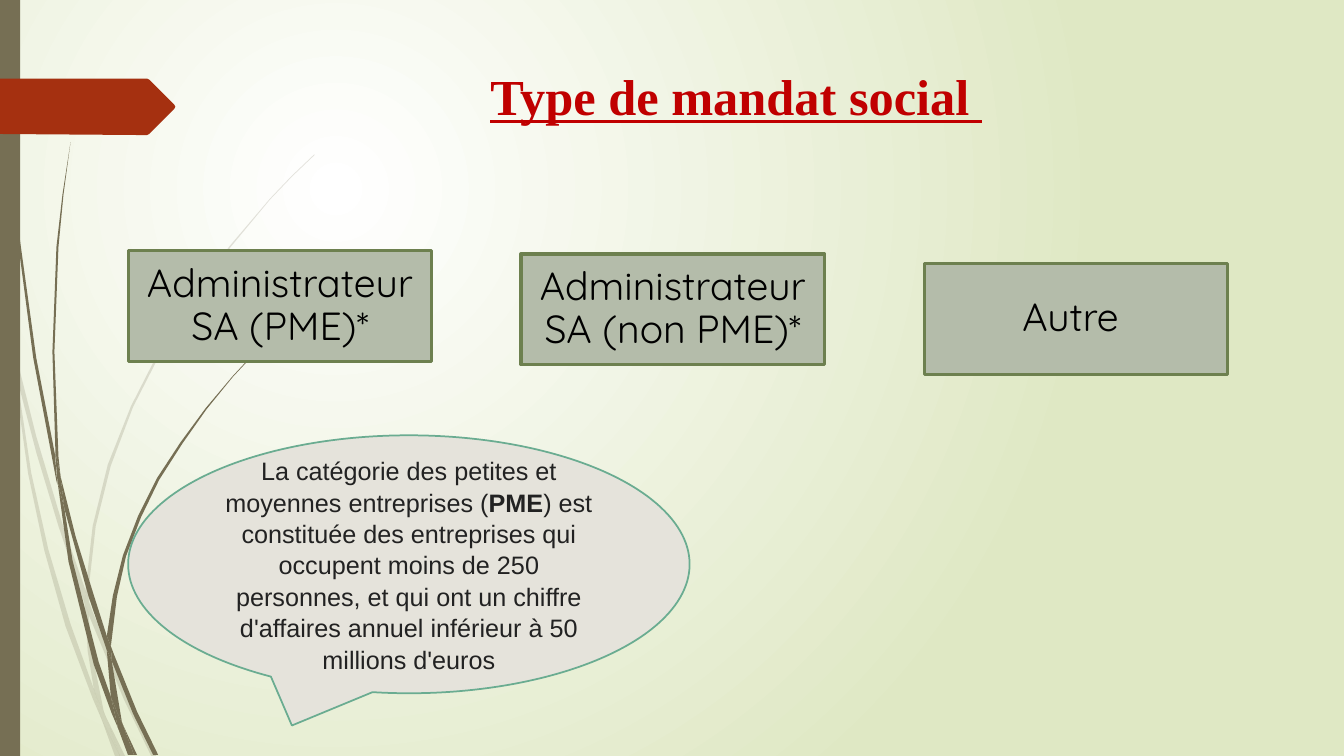
import pptx
import pptx.util
import pptx.dml.color
import pptx.enum.shapes
import pptx.enum.text
import pptx.oxml.ns
from dataclasses import dataclass
from lxml import etree

Cm, Pt = pptx.util.Cm, pptx.util.Pt
RGB = pptx.dml.color.RGBColor.from_string
SHAPE = pptx.enum.shapes.MSO_SHAPE
ALIGN = pptx.enum.text.PP_ALIGN
ANCHOR = pptx.enum.text.MSO_ANCHOR
qn = pptx.oxml.ns.qn


@dataclass(frozen=True)
class Theme:
    glow: str = "FFFFFF"
    backdrop: str = "DFE8C4"
    stem: str = "766F54"
    banner: str = "A53010"
    title: str = "C00000"
    box_fill: str = "B4BCAA"
    box_line: str = "6D804F"
    box_text: str = "000000"
    bubble_fill: str = "E5E3DB"
    bubble_line: str = "6AAC91"
    bubble_text: str = "222222"
    title_size: int = 36
    box_size: int = 28
    bubble_size: int = 18


# Outlines are lists of x, y points in hundredths of an inch.
PALE_STEMS = [
    [(11, 350), (9, 322), (0, 282), (0, 299), (10, 344)],
    [(58, 522), (84, 599), (85, 586), (62, 520), (36, 433), (14, 345), (17, 376), (36, 449)],
    [(92, 607), (88, 596), (88, 610), (123, 694), (150, 750), (155, 750), (127, 692)],
    [(119, 750), (124, 750), (105, 711)],
    [(93, 683), (70, 619), (48, 545), (31, 469), (17, 376), (11, 350), (28, 470),
     (44, 546), (65, 621), (92, 693), (101, 714), (99, 707)],
    [(84, 599), (87, 646), (93, 683), (96, 692), (105, 711), (103, 706), (91, 646),
     (88, 610), (88, 608)],
    [(88, 584), (95, 522), (110, 462), (132, 404), (160, 349), (192, 296), (229, 245),
     (268, 198), (290, 175), (312, 154), (312, 153), (289, 175), (268, 197), (228, 244),
     (191, 294), (158, 348), (130, 403), (107, 461), (92, 522), (85, 584), (85, 586),
     (88, 596)],
    [(101, 714), (114, 750), (119, 750)],
    [(88, 608), (88, 610), (88, 596), (85, 586), (84, 599)],
    [(96, 692), (93, 683), (99, 707), (101, 714), (119, 750), (105, 711)],
]
DARK_STEMS = [
    [(7, 110), (17, 233), (33, 355), (56, 477), (57, 481), (55, 457), (55, 453),
     (36, 355), (19, 232), (8, 109), (5, 48), (4, 0), (3, 0), (4, 48)],
    [(88, 592), (106, 645), (106, 633), (106, 631), (93, 590), (75, 532), (60, 472),
     (64, 505)],
    [(113, 649), (110, 641), (111, 656), (132, 708), (152, 749), (157, 749), (136, 706)],
    [(110, 691), (98, 657), (72, 556), (64, 505), (57, 477), (68, 557), (93, 659),
     (111, 708), (117, 722), (116, 717)],
    [(60, 472), (58, 453), (54, 349), (58, 245), (63, 193), (70, 141), (62, 193),
     (56, 245), (52, 349), (55, 449)],
    [(133, 749), (136, 749), (122, 719)],
    [(57, 477), (64, 505), (60, 472), (55, 449), (55, 453)],
    [(111, 633), (116, 592), (125, 552), (140, 513), (158, 476), (181, 440), (205, 406),
     (231, 374), (245, 359), (261, 344), (260, 344), (245, 358), (231, 373), (204, 405),
     (179, 439), (156, 474), (137, 512), (122, 551), (112, 591), (106, 631), (110, 641)],
    [(117, 722), (127, 749), (131, 749)],
    [(106, 645), (110, 691), (116, 706), (122, 719), (121, 716), (111, 656), (109, 651)],
    [(106, 645), (109, 651), (111, 656), (110, 641), (106, 631), (106, 633)],
    [(116, 706), (110, 691), (116, 717), (117, 722), (130, 749), (133, 749), (122, 719)],
]
BANNER = [(173, 108), (148, 133), (146, 134), (136, 134), (0, 133), (0, 78), (146, 78),
          (148, 79), (173, 104), (174, 106)]


class SlideBuilder:
    def __init__(self, slide, theme):
        self.slide = slide
        self.theme = theme

    def backdrop(self):
        """Radial gradient whose centre lies in the upper left quarter."""
        fill = self.slide.background.fill
        fill.gradient()
        for stop, color in zip(fill.gradient_stops, (self.theme.glow, self.theme.backdrop)):
            stop.color.rgb = RGB(color)
        gradient = self.slide.element.find(".//" + qn("a:gradFill"))
        gradient.remove(gradient.find(qn("a:lin")))
        circle = etree.SubElement(gradient, qn("a:path"), {"path": "circle"})
        etree.SubElement(circle, qn("a:fillToRect"), l="50000", t="50000", r="100000", b="100000")

    def paint(self, shape, fill, line=None, width=0, opacity=100):
        shape.shadow.inherit = False
        shape.fill.solid()
        shape.fill.fore_color.rgb = RGB(fill)
        if opacity < 100:
            color = shape.element.spPr.find(".//" + qn("a:srgbClr"))
            etree.SubElement(color, qn("a:alpha"), val=str(opacity * 1000))
        if line:
            shape.line.color.rgb = RGB(line)
            shape.line.width = Pt(width)
        else:
            shape.line.fill.background()

    def outline(self, points, color, opacity=100, shapes=None):
        shapes = self.slide.shapes if shapes is None else shapes
        pen = shapes.build_freeform(*points[0], scale=Cm(0.0254))
        pen.add_line_segments(points[1:], close=True)
        self.paint(pen.convert_to_shape(), color, opacity=opacity)

    def stems(self, outlines, opacity=100):
        group = self.slide.shapes.add_group_shape()
        for points in outlines:
            self.outline(points, self.theme.stem, opacity, group.shapes)

    def block(self, preset, place, fill, line=None, width=0):
        block = self.slide.shapes.add_shape(preset, *map(Cm, place))
        self.paint(block, fill, line, width)
        return block

    def set_text(self, shape, runs, paragraph_format, anchor=ANCHOR.MIDDLE):
        """Fill a shape with one centred paragraph of (text, font format) runs."""
        frame = shape.text_frame
        frame.word_wrap = True
        frame.vertical_anchor = anchor
        paragraph = frame.paragraphs[0]
        for name, value in {"alignment": ALIGN.CENTER, **paragraph_format}.items():
            setattr(paragraph, name, value)
        for text, font_format in runs:
            run = paragraph.add_run()
            run.text = text
            for name, value in font_format.items():
                if name == "color":
                    run.font.color.rgb = RGB(value)
                else:
                    setattr(run.font, name, value)

    def title(self, text, place):
        heading = self.slide.shapes.add_textbox(*map(Cm, place))
        style = {"name": "Times New Roman", "size": Pt(self.theme.title_size),
                 "bold": True, "underline": True, "color": self.theme.title}
        self.set_text(heading, [(text, style)], {}, ANCHOR.TOP)

    def mandate(self, text, left, top):
        box = self.block(SHAPE.RECTANGLE, (left, top, 7.65, 2.79),
                         self.theme.box_fill, self.theme.box_line, 2.25)
        style = {"name": "Quicksand", "size": Pt(self.theme.box_size),
                 "color": self.theme.box_text}
        self.set_text(box, [(text, style)], {"line_spacing": 0.9, "space_before": Pt(10)})

    def definition(self, parts, place):
        """Speech bubble; parts are (text, bold) pairs."""
        bubble = self.block(SHAPE.OVAL_CALLOUT, place,
                            self.theme.bubble_fill, self.theme.bubble_line, 1.25)
        style = {"name": "Arial", "size": Pt(self.theme.bubble_size),
                 "color": self.theme.bubble_text}
        runs = [(text, {**style, "bold": bold}) for text, bold in parts]
        self.set_text(bubble, runs, {"line_spacing": 1.04})


def main():
    deck = pptx.Presentation()
    deck.slide_width, deck.slide_height = Cm(33.87), Cm(19.05)
    theme = Theme()
    page = SlideBuilder(deck.slides.add_slide(deck.slide_layouts[6]), theme)

    page.backdrop()
    page.stems(PALE_STEMS, opacity=20)
    page.stems(DARK_STEMS)
    page.block(SHAPE.RECTANGLE, (0, 0, 0.51, 19.05), theme.stem)
    page.outline(BANNER, theme.banner)

    page.title("Type de mandat social ", (6.17, 1.52, 24.77, 3.56))
    for mandate, left, top in [("Administrateur SA (PME)*", 3.23, 6.32),
                               ("Administrateur SA (non PME)*", 13.13, 6.4),
                               ("Autre ", 23.29, 6.65)]:
        page.mandate(mandate, left, top)
    page.definition([
        ("La catégorie des petites et moyennes entreprises (", False),
        ("PME", True),
        (") est constituée des entreprises qui occupent moins de 250 personnes, "
         "et qui ont un chiffre d'affaires annuel inférieur à 50 millions d'euros", False),
    ], (3.23, 10.97, 14.15, 6.5))
    deck.save("out.pptx")


if __name__ == "__main__":
    main()
